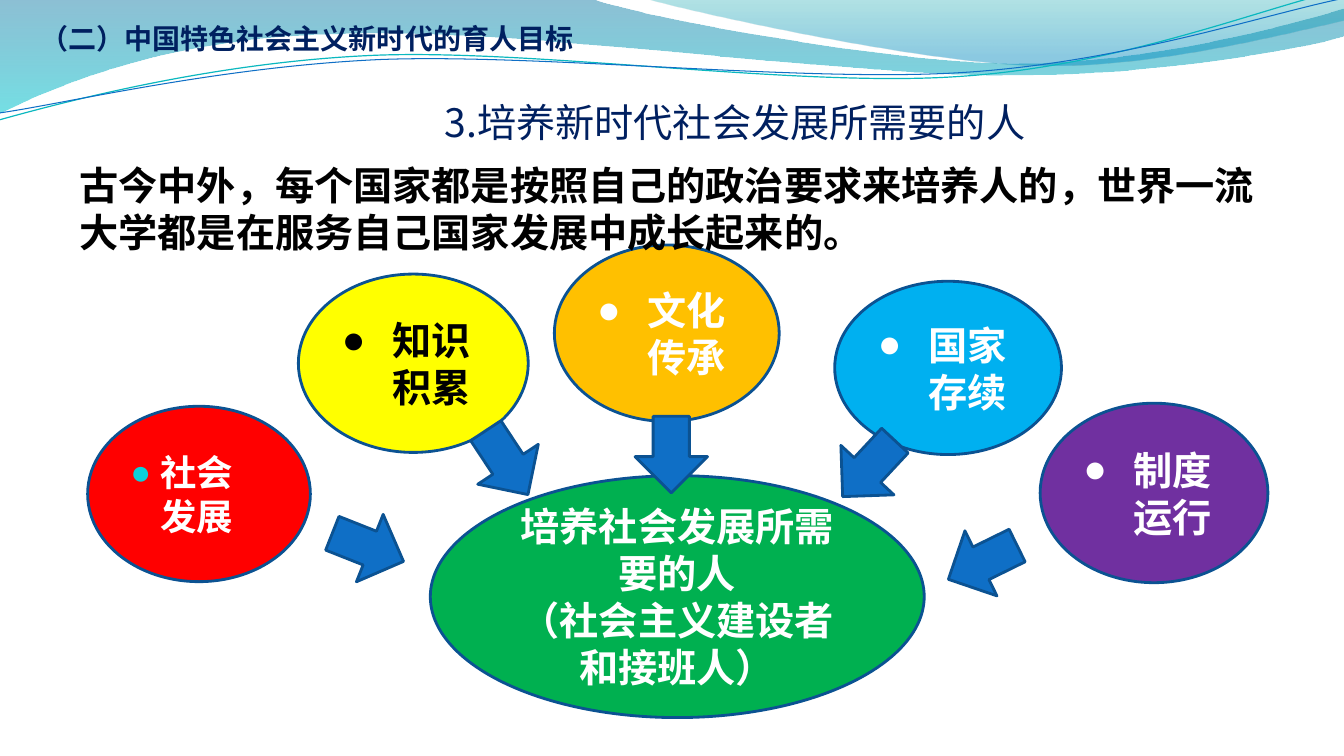
from pptx import Presentation
from pptx.dml.color import RGBColor
from pptx.enum.shapes import MSO_SHAPE
from pptx.enum.text import MSO_ANCHOR, MSO_AUTO_SIZE, PP_ALIGN
from pptx.oxml.ns import qn
from pptx.util import Pt
from lxml.etree import SubElement

FONT, BULLET_FONT = "Noto Sans CJK SC", "Arial"
NAVY, BLUE, EDGE, WHITE, BLACK = "002060", "0F6FC6", "0B5292", "FFFFFF", "000000"

HEADING = "（二）中国特色社会主义新时代的育人目标"
TITLE = "3.培养新时代社会发展所需要的人"
STATEMENT = "古今中外，每个国家都是按照自己的政治要求来培养人的，世界一流大学都是在服务自己国家发展中成长起来的。"
GOAL = ["培养社会发展所需要的人", "（社会主义建设者和接班人）"]

SOCIETY = ("社会发展", (62.6, 290.2, 159.1, 125.3), "FF0000")
NEEDS = [
    ("知识积累", (213.1, 195.8, 164.2, 127.4), "FFFF00", BLACK),
    ("文化传承", (396, 175, 160.6, 126), "FFC000", WHITE),
    ("制度运行", (743, 288, 162.7, 128.2), "7030A0", WHITE),
    ("国家存续", (596.2, 200.9, 162, 123.8), "00B0F0", WHITE),
]
ARROW_SIZE = (51.8, 54.7)
ARROWS = [
    (453.6, 297.4, 0),
    (336.2, 303.1, 326.6),
    (594.7, 307.4, 43),
    (236.9, 363.6, 291.6),
    (676.1, 374.4, 63.8),
]

BANDS = [
    ([[(0, 0)], [(422.6, -0.7)],
      [(456.5, 12.2), (637.2, 45.4), (727.9, 45.4)],
      [(819.4, 45.4), (920.2, 18.7), (959.8, 6.5)],
      [(961.2, 25.9)],
      [(943.9, 31.7), (835.2, 54.7), (715.7, 54)],
      [(596.9, 54), (366.5, 20.2), (247, 24.5)],
      [(123.8, 25.9), (43.9, 59.8), (-0.7, 81.4)],
      [(0, 0)]],
     [(0, "0074A1", 45), (1, "00C6CF", 55)]),
    ([[(460.1, -0.7)],
      [(488.9, 7.9), (654.5, 44.6), (738, 46.8)],
      [(821.5, 49.7), (923, 23), (959.8, 15.1)],
      [(959.8, 0)],
      [(460.1, -0.7)]],
     [(0, "00A1A9", 30), (0.8, "008BBF", 45)]),
]
WAVES = [
    ([[(-0.7, 85.7)],
      [(46.1, 72.7), (151.9, 44.6), (265.7, 39.6)],
      [(379.4, 34.6), (568.8, 62.6), (684, 54.7)],
      [(799.2, 47.5), (901.4, 5.8), (958.3, -7.2)]], "0AB8BF", 0.85),
    ([[(0, 80.6)],
      [(45.4, 74.2), (157, 47.5), (272.2, 42.5)],
      [(386.6, 38.2), (573.1, 59), (687.6, 51.8)],
      [(802.8, 44.6), (903.6, 10.1), (960.5, -1.4)]], BLUE, 0.75),
]


def color(value):
    return RGBColor.from_string(value)


def apply(target, values):
    for name, value in values.items():
        setattr(target, name, value)


def place(shape, box):
    apply(shape, dict(zip(("left", "top", "width", "height"), map(Pt, box))))


def paint(shape, fill):
    shape.fill.solid()
    shape.fill.fore_color.rgb = color(fill)
    shape.line.color.rgb = color(EDGE)
    shape.line.width = Pt(2)


def write(shape, lines, size, ink, bold=True, align=PP_ALIGN.LEFT, anchor=MSO_ANCHOR.MIDDLE):
    frame = shape.text_frame
    apply(frame, {"word_wrap": True, "auto_size": MSO_AUTO_SIZE.NONE, "vertical_anchor": anchor})
    for index, line in enumerate(lines):
        para = frame.add_paragraph() if index else frame.paragraphs[0]
        apply(para, {"alignment": align, "space_before": Pt(0)})
        span = para.add_run()
        span.text = line
        apply(span.font, {"name": FONT, "size": Pt(size), "bold": bold})
        span.font.color.rgb = color(ink)
        SubElement(span.font._element, qn("a:ea"), typeface=FONT)


def add_bullet(shape, indent, ink, percent):
    properties = shape.text_frame.paragraphs[0]._p.get_or_add_pPr()
    properties.set("marL", str(Pt(indent)))
    properties.set("indent", str(-Pt(indent)))
    bullet_color = SubElement(properties, qn("a:buClr"))
    SubElement(bullet_color, qn("a:srgbClr"), val=ink)
    SubElement(properties, qn("a:buSzPct"), val=str(percent * 1000))
    SubElement(properties, qn("a:buFont"), typeface=BULLET_FONT)
    SubElement(properties, qn("a:buChar"), char="●")


def add_shape(page, kind, box, fill):
    shape = page.shapes.add_shape(kind, *map(Pt, box))
    shape.shadow.inherit = False
    paint(shape, fill)
    return shape


def add_text(page, box, *args, **options):
    shape = page.shapes.add_textbox(*map(Pt, box))
    write(shape, *args, **options)


def bend(shape, segments):
    steps = iter(list(shape._element.iter(qn("a:lnTo"))))
    for segment in segments[1:]:
        step = next(steps)
        if len(segment) == 3:
            step.tag = qn("a:cubicBezTo")
            for extra in (next(steps), next(steps)):
                step.append(extra[0])
                extra.getparent().remove(extra)


def add_outline(page, segments, close, layer):
    points = [(Pt(x), Pt(y)) for segment in segments for x, y in segment]
    builder = page.shapes.build_freeform(*points[0])
    builder.add_line_segments(points[1:], close=close)
    shape = builder.convert_to_shape()
    bend(shape, segments)
    shape.shadow.inherit = False
    page.shapes._spTree.insert(2 + layer, shape._element)
    return shape


def add_background(page):
    for layer, (segments, stops) in enumerate(BANDS):
        band = add_outline(page, segments, True, layer)
        band.line.fill.background()
        band.fill.gradient()
        band.fill.gradient_angle = 270
        for stop, (position, value, opacity) in zip(band.fill.gradient_stops, stops):
            stop.position = position
            stop.color.rgb = color(value)
            SubElement(stop._gs.find(qn("a:srgbClr")), qn("a:alpha"), val=str(opacity * 1000))
    for layer, (segments, value, width) in enumerate(WAVES, len(BANDS)):
        wave = add_outline(page, segments, False, layer)
        wave.fill.background()
        wave.line.color.rgb = color(value)
        wave.line.width = Pt(width)


def main():
    deck = Presentation()
    apply(deck, {"slide_width": Pt(960), "slide_height": Pt(540)})
    page = deck.slides.add_slide(deck.slide_layouts[1])
    add_background(page)

    title, society = page.placeholders
    place(title, (180, 52.6, 689.8, 51.1))
    write(title, [TITLE], 28, NAVY, bold=False, align=PP_ALIGN.CENTER, anchor=MSO_ANCHOR.BOTTOM)
    apply(title.text_frame, {"margin_left": 0, "margin_right": 0, "margin_bottom": 0})

    text, box, fill = SOCIETY
    place(society, box)
    geometry = SubElement(society._element.spPr, qn("a:prstGeom"), prst="ellipse")
    SubElement(geometry, qn("a:avLst"))
    paint(society, fill)
    write(society, [text], 26, WHITE)
    add_bullet(society, 21.6, "0BD0D9", 95)

    goal = add_shape(page, MSO_SHAPE.OVAL, (307.4, 339.8, 352.8, 172.8), "00B050")
    write(goal, GOAL, 28, WHITE, align=PP_ALIGN.CENTER)
    for text, box, fill, ink in NEEDS:
        need = add_shape(page, MSO_SHAPE.OVAL, box, fill)
        write(need, [text], 28, ink)
        add_bullet(need, 36, ink, 100)
    for left, top, angle in ARROWS:
        arrow = add_shape(page, MSO_SHAPE.DOWN_ARROW, (left, top, *ARROW_SIZE), BLUE)
        arrow.rotation = angle

    add_text(page, (49.7, 111.6, 864.7, 74.9), [STATEMENT], 28, BLACK, anchor=MSO_ANCHOR.TOP)
    add_text(page, (17.3, 0, 403.9, 55.4), [HEADING], 20, NAVY, align=PP_ALIGN.CENTER)
    deck.save("out.pptx")


if __name__ == "__main__":
    main()
